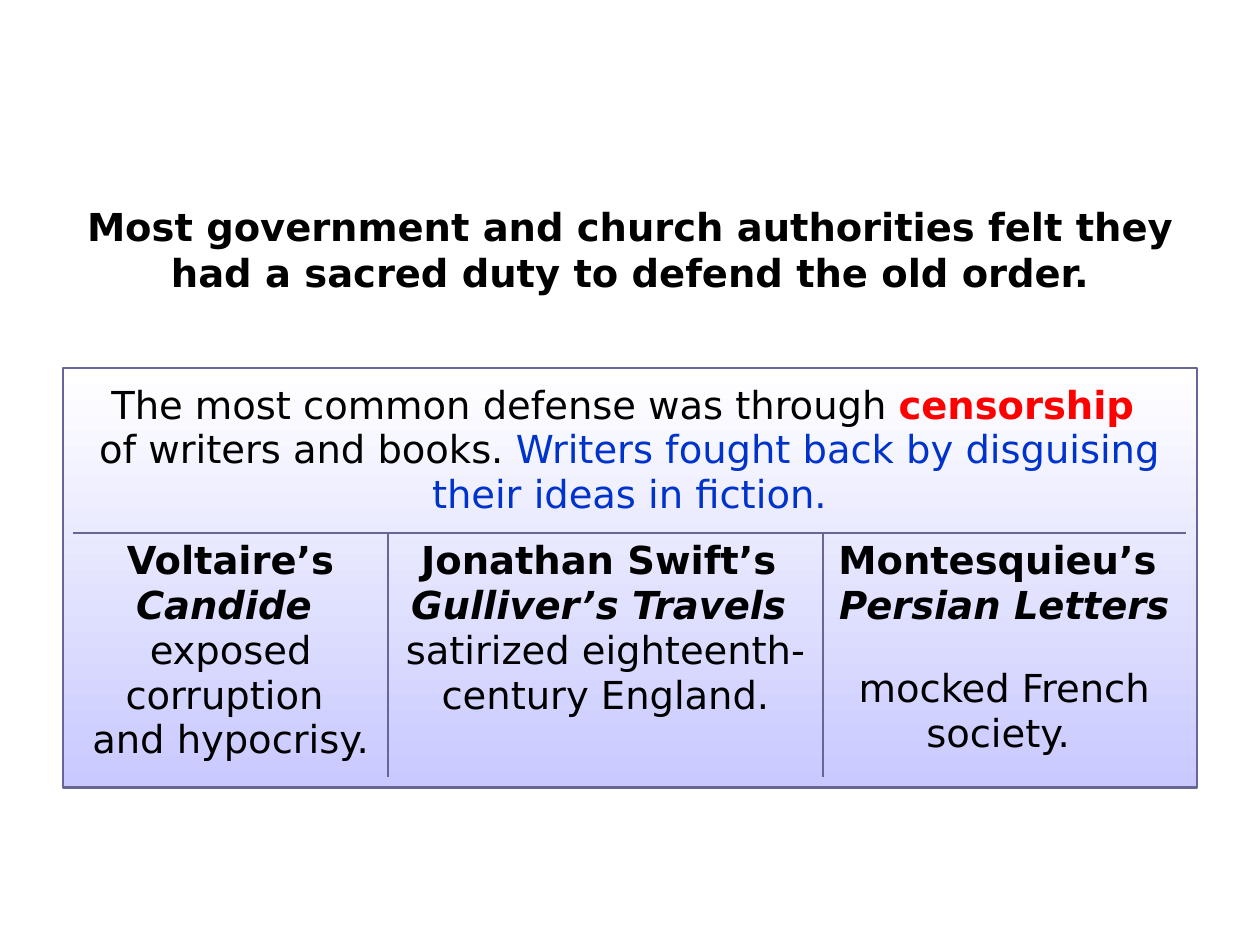
from lxml.etree import SubElement
from pptx import Presentation
from pptx.dml.color import RGBColor
from pptx.enum.shapes import MSO_SHAPE
from pptx.enum.text import MSO_ANCHOR, PP_ALIGN
from pptx.oxml.ns import qn
from pptx.util import Pt

PX = 9144  # 100 px to the inch
BLACK = RGBColor(0, 0, 0)
WHITE = RGBColor(255, 255, 255)
RED = RGBColor(255, 0, 0)
BLUE = RGBColor(0, 0x33, 0xCC)
LILAC = RGBColor(0xC9, 0xC9, 0xFF)
SLATE = RGBColor(0x66, 0x66, 0x99)


def write(para, text, color=BLACK, bold=False, italic=False):
    """Add text to a centred paragraph; a newline becomes a line break."""
    para.alignment = PP_ALIGN.CENTER
    for num, line in enumerate(text.split("\n")):
        if num:
            para.add_line_break()
        if line:
            run = para.add_run()
            run.text = line
            font = run.font
            font.name, font.size = "DejaVu Sans", Pt(22)
            font.bold, font.italic = bold, italic
            font.color.rgb = color


def edge(cell, sides):
    """Draw the named sides (of L, R, T, B) and clear the others."""
    props = cell._tc.get_or_add_tcPr()
    for side in "LRTB":
        line = SubElement(props, qn(f"a:ln{side}"), w=str(Pt(1)))
        if side in sides:
            fill = SubElement(line, qn("a:solidFill"))
            SubElement(fill, qn("a:srgbClr"), val=str(SLATE))
        else:
            SubElement(line, qn("a:noFill"))


deck = Presentation()
deck.slide_width, deck.slide_height = 1000 * PX, 750 * PX
slide = deck.slides.add_slide(deck.slide_layouts[6])
shapes = slide.shapes

# Heading
head = shapes.add_textbox(50 * PX, 156 * PX, 900 * PX, 107 * PX).text_frame
head.word_wrap = True
write(head.paragraphs[0],
      "Most government and church authorities felt they had a sacred duty "
      "to defend the old order.", bold=True)

# Panel behind the table
panel = shapes.add_shape(MSO_SHAPE.RECTANGLE, 50 * PX, 292 * PX, 900 * PX, 333 * PX)
panel.shadow.inherit = False
panel.fill.gradient()
panel.fill.gradient_angle = 270
for stop, color in zip(panel.fill.gradient_stops, (WHITE, LILAC)):
    stop.color.rgb = color
panel.line.color.rgb = SLATE
panel.line.width = Pt(1.5)

# Table
widths = (250, 345, 288)
heights = (131, 193)
table = shapes.add_table(2, 3, 58 * PX, 292 * PX, sum(widths) * PX,
                         sum(heights) * PX).table
table.first_row = table.horz_banding = False
for col, width in zip(table.columns, widths):
    col.width = width * PX
for row, height in zip(table.rows, heights):
    row.height = height * PX

sides = ("B", "B", "B", "TR", "LTR", "LT")
for cell, drawn in zip(table.iter_cells(), sides):
    edge(cell, drawn)
    cell.fill.background()

top = table.cell(0, 0)
top.merge(table.cell(0, 2))
top.vertical_anchor = MSO_ANCHOR.MIDDLE
para = top.text_frame.paragraphs[0]
write(para, "The most common defense was through ")
write(para, "censorship \n", color=RED, bold=True)
write(para, "of writers and books. ")
write(para, "Writers fought back by disguising their ideas in fiction.", color=BLUE)

works = (
    ("Voltaire’s ", "Candide \n", "exposed corruption \nand hypocrisy."),
    ("Jonathan Swift’s \n", "Gulliver’s Travels \n",
     "satirized eighteenth-\ncentury England."),
    ("Montesquieu’s \n", "Persian Letters \n", "mocked French society. "),
)
for col, (author, title, aim) in enumerate(works):
    para = table.cell(1, col).text_frame.paragraphs[0]
    write(para, author, bold=True)
    write(para, title, bold=True, italic=True)
    write(para, aim)

deck.save("out.pptx")
